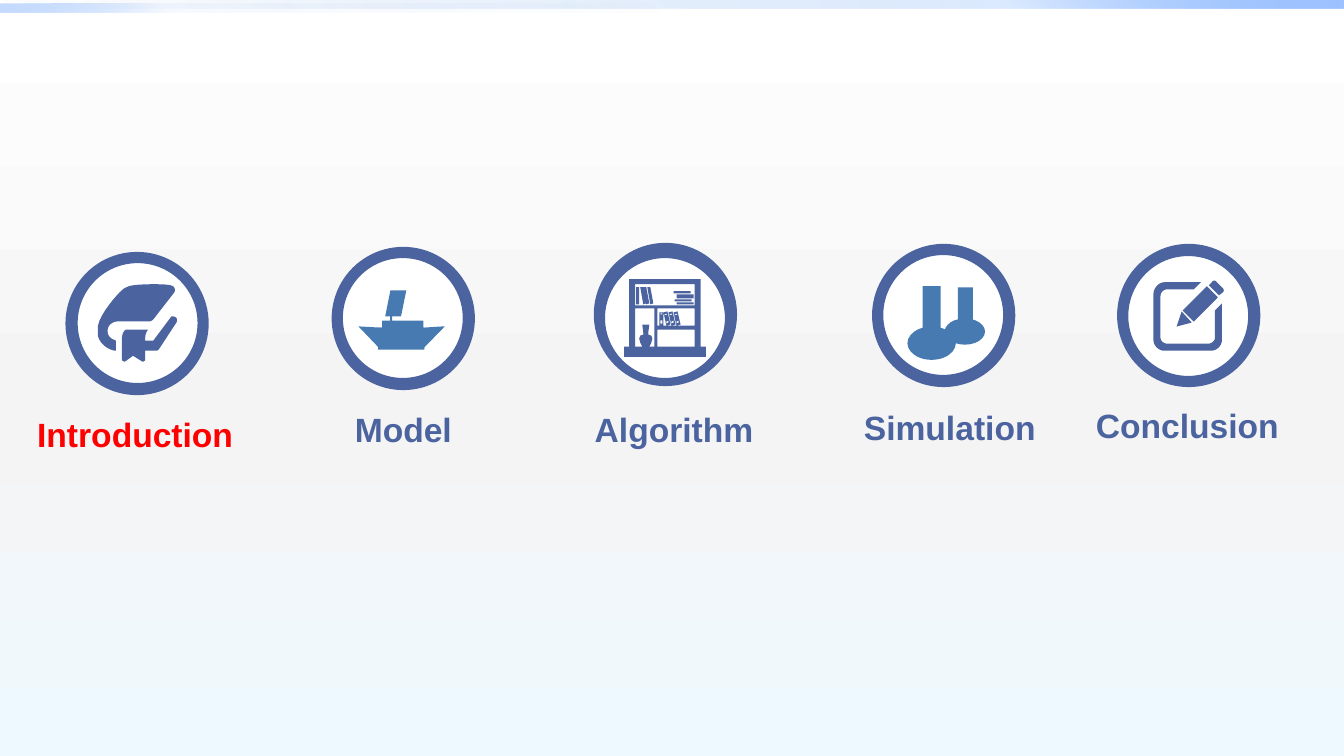
from lxml import etree
from pptx import Presentation
from pptx.dml.color import RGBColor
from pptx.enum import shapes, text
from pptx.oxml import ns
from pptx.util import Inches, Pt

INDIGO = RGBColor(0x4B, 0x64, 0x9F)
STEEL = RGBColor(0x47, 0x7A, 0xB1)
WHITE = RGBColor(0xFF, 0xFF, 0xFF)
RED = RGBColor(0xFF, 0x00, 0x00)
MIST = RGBColor(0xF4, 0xF4, 0xF4)
ICE = RGBColor(0xEE, 0xF9, 0xFF)
ROYAL = RGBColor(0x00, 0x58, 0xB7)
AZURE = RGBColor(0x4F, 0x95, 0xFF)
SKY = RGBColor(0x9E, 0xC2, 0xFF)

FORM = shapes.MSO_SHAPE
CURVE_STEPS = 8

# Outlines: a pair is a corner, six numbers are a Bezier curve to the last pair
GRADUATION_CAP = [
    [(1.70, 3.14), (1.70, 3.14, 1.70, 3.14, 1.72, 3.14),
     (1.74, 3.14, 1.77, 3.16, 1.75, 3.20), (1.58, 3.46),
     (1.57, 3.48, 1.55, 3.48, 1.54, 3.48), (1.44, 3.48), (1.44, 3.56),
     (1.44, 3.57, 1.44, 3.58, 1.43, 3.58), (1.42, 3.59), (1.40, 3.58),
     (1.32, 3.53), (1.25, 3.58), (1.24, 3.59, 1.23, 3.59, 1.22, 3.58),
     (1.21, 3.58, 1.21, 3.57, 1.21, 3.56), (1.21, 3.36),
     (1.21, 3.31, 1.23, 3.28, 1.25, 3.27), (1.47, 3.27),
     (1.44, 3.30, 1.44, 3.35, 1.44, 3.38), (1.52, 3.38)],
    [(1.51, 2.82), (1.57, 2.82, 1.64, 2.82, 1.69, 2.83),
     (1.74, 2.84, 1.74, 2.88, 1.73, 2.90), (1.52, 3.17),
     (1.51, 3.18, 1.49, 3.19, 1.48, 3.19), (1.16, 3.19),
     (1.13, 3.19, 1.05, 3.22, 1.07, 3.31),
     (1.08, 3.34, 1.10, 3.36, 1.13, 3.37), (1.15, 3.38), (1.15, 3.48),
     (1.11, 3.48, 1.00, 3.44, 0.97, 3.33),
     (0.97, 3.30, 0.97, 3.27, 0.97, 3.24),
     (0.99, 3.11, 1.18, 2.90, 1.21, 2.88),
     (1.23, 2.86, 1.25, 2.85, 1.28, 2.84),
     (1.30, 2.83, 1.40, 2.82, 1.51, 2.82)],
]
PENCIL_AND_PAD = [
    [(12.13, 2.90), (12.09, 2.93), (11.99, 2.83), (12.02, 2.80),
     (12.03, 2.78, 12.05, 2.78, 12.06, 2.79), (12.13, 2.86),
     (12.14, 2.87, 12.14, 2.89, 12.13, 2.90)],
    [(11.84, 3.19), (11.73, 3.08), (11.97, 2.84), (12.08, 2.95)],
    [(11.82, 3.20), (11.67, 3.24), (11.72, 3.09)],
    [(11.58, 2.87), (11.54, 2.87, 11.51, 2.90, 11.51, 2.94), (11.51, 3.35),
     (11.51, 3.38, 11.54, 3.41, 11.58, 3.41), (11.98, 3.41),
     (12.02, 3.41, 12.05, 3.38, 12.05, 3.35), (12.05, 3.08), (12.12, 3.01),
     (12.12, 3.37), (12.12, 3.43, 12.07, 3.48, 12.01, 3.48), (11.55, 3.48),
     (11.49, 3.48, 11.44, 3.43, 11.44, 3.37), (11.44, 2.92),
     (11.44, 2.86, 11.49, 2.80, 11.55, 2.80), (11.91, 2.80), (11.84, 2.87)],
]


def bookcase():
    """Outlines of the case, its four openings and what stands in them."""
    case = [(6.24, 2.77), (6.95, 2.77), (6.95, 3.44), (7.00, 3.44),
            (7.00, 3.54), (6.19, 3.54), (6.19, 3.44), (6.24, 3.44)]
    openings = [(6.30, 2.82, 6.89, 3.03), (6.30, 3.06, 6.49, 3.44),
                (6.52, 3.06, 6.89, 3.23), (6.52, 3.27, 6.89, 3.44)]
    lying_books = [(6.68, 2.89, 6.85, 2.91), (6.71, 2.92, 6.88, 2.96),
                   (6.69, 2.97, 6.86, 2.99), (6.71, 3.00, 6.88, 3.02)]
    upright = [(6.31, 2.85, 6.34, 3.02), (6.54, 3.10, 6.58, 3.23),
               (6.55, 3.11, 6.57, 3.12), (6.55, 3.18, 6.57, 3.21)]
    outlines = [case]
    for x1, y1, x2, y2 in openings + lying_books + upright:
        outlines.append([(x1, y1), (x2, y1), (x2, y2), (x1, y2)])
    for x in (6.35, 6.38, 6.42):
        outlines.append([(x, 2.85), (x + .03, 2.85), (x + .06, 3.01), (x + .03, 3.02)])
    for x in (6.58, 6.63, 6.68):
        outlines += [
            [(x, 3.10), (x + .04, 3.09), (x + .07, 3.22), (x + .03, 3.23)],
            [(x + .01, 3.12), (x + .03, 3.11), (x + .04, 3.12), (x + .01, 3.13)],
            [(x + .03, 3.19), (x + .05, 3.18), (x + .05, 3.20), (x + .03, 3.21)]]
    vase_side = [(6.37, 3.22), (6.38, 3.30), (6.38, 3.32), (6.35, 3.33),
                 (6.34, 3.36), (6.35, 3.40), (6.37, 3.44)]
    outlines.append(vase_side + [(12.81 - x, y) for x, y in reversed(vase_side)])
    return outlines


def flatten(outline):
    """Turn corners and curves into points in EMU."""
    points = []
    for step in outline:
        if len(step) == 2:
            points.append(step)
            continue
        ends = [points[-1], step[:2], step[2:4], step[4:]]
        for i in range(1, CURVE_STEPS + 1):
            t = i / CURVE_STEPS
            weights = ((1 - t) ** 3, 3 * t * (1 - t) ** 2, 3 * t * t * (1 - t), t ** 3)
            points.append(tuple(sum(w * end[axis] for w, end in zip(weights, ends))
                                for axis in (0, 1)))
    return [(Inches(x), Inches(y)) for x, y in points]


class SlideBuilder:
    """Holds the style and the page, and draws each kind of element."""
    font, label_size, disc, hole = "Arial", Pt(24), 1.4, 1.21

    def __init__(self, page):
        self.page = page
        self.target = page.shapes

    def gradient(self, fill, holder, stops, angle):
        """Fill with (position, colour, opacity) stops, angle clockwise."""
        fill.gradient()
        fill.gradient_angle = 360 - angle
        stop_list = holder.xpath(".//a:gsLst")[0]
        for old in list(stop_list):
            stop_list.remove(old)
        for position, color, opacity in stops:
            stop = etree.SubElement(stop_list, ns.qn("a:gs"), pos=str(position * 1000))
            tint = etree.SubElement(stop, ns.qn("a:srgbClr"), val=str(color))
            if opacity < 100:
                etree.SubElement(tint, ns.qn("a:alpha"), val=str(opacity * 1000))

    def shape(self, form, left, top, width, height, color=None, line=None, turn=0):
        item = self.target.add_shape(form, *map(Inches, (left, top, width, height)))
        item.rotation = turn
        return self.paint(item, color, line)

    def paint(self, item, color, line=None):
        item.shadow.inherit = False
        if color is not None:
            item.fill.solid()
            item.fill.fore_color.rgb = color
        if line is None:
            item.line.fill.background()
        else:
            item.line.color.rgb = line
            item.line.width = Pt(1.5)
        return item

    def bar(self, top, width, stops, angle):
        item = self.shape(FORM.RECTANGLE, 0, top, width, 0.08)
        self.gradient(item.fill, item._element, stops, angle)

    def icon(self, outlines, color):
        first, *rest = [flatten(outline) for outline in outlines]
        builder = self.target.build_freeform(*first[0], scale=1.0)
        builder.add_line_segments(first[1:], close=True)
        for points in rest:
            builder.move_to(*points[0])
            builder.add_line_segments(points[1:], close=True)
        self.paint(builder.convert_to_shape(), color)

    def label(self, words, left, top, width, color, wrap):
        box = self.target.add_textbox(*map(Inches, (left, top, width, 0.5)))
        box.text_frame.word_wrap = wrap
        box.text_frame.auto_size = text.MSO_AUTO_SIZE.SHAPE_TO_FIT_TEXT
        span = box.text_frame.paragraphs[0].add_run()
        span.text = words
        span.font.name, span.font.size, span.font.bold = self.font, self.label_size, True
        span.font.color.rgb = color

    def badge(self, disc_at, hole_at, label, outlines=(), parts=()):
        """Group a ring, its icon and its label."""
        self.target = self.page.shapes.add_group_shape().shapes
        self.shape(FORM.OVAL, *disc_at, self.disc, self.disc, INDIGO, INDIGO)
        self.shape(FORM.OVAL, *hole_at, self.hole, self.hole, WHITE, INDIGO)
        if outlines:
            self.icon(outlines, INDIGO)
        for form, frame, turn in parts:
            self.shape(form, *frame, STEEL, turn=turn)
        self.label(*label)
        self.target = self.page.shapes


def main():
    deck = Presentation()
    deck.slide_width, deck.slide_height = Inches(13.33), Inches(7.5)
    page = deck.slides.add_slide(deck.slide_layouts[6])
    build = SlideBuilder(page)
    build.gradient(page.background.fill, page._element,
                   [(0, WHITE, 100), (55, MIST, 100), (100, ICE, 100)], 90)
    build.bar(0, 13.33, [(0, ROYAL, 0), (75, AZURE, 20), (100, SKY, 100)], 315)
    build.bar(0.04, 6.67, [(0, ROYAL, 0), (75, AZURE, 5), (100, SKY, 60)], 135)

    pillars = [(FORM.OVAL, (9.37, 3.16, 0.40, 0.26), 0),
               (FORM.RECTANGLE, (9.50, 2.85, 0.15, 0.39), 0),
               (FORM.OVAL, (9.00, 3.24, 0.48, 0.33), 0),
               (FORM.RECTANGLE, (9.15, 2.84, 0.18, 0.50), 0)]
    ship = [(FORM.RECTANGLE, (3.75, 3.25, 0.46, 0.22), 0),
            (FORM.RIGHT_TRIANGLE, (3.62, 3.10, 0.28, 0.30), 316.3),
            (FORM.RIGHT_TRIANGLE, (4.05, 3.11, 0.31, 0.28), 314.2),
            (FORM.RECTANGLE, (3.79, 3.18, 0.41, 0.15), 0),
            (FORM.RECTANGLE, (3.87, 2.90, 0.02, 0.55), 0),
            (FORM.PARALLELOGRAM, (3.82, 2.88, 0.21, 0.26), 0)]
    build.badge((0.66, 2.51), (0.76, 2.60),
                ("Introduction", 0.27, 4.06, 2.16, RED, False), GRADUATION_CAP)
    build.badge((5.90, 2.42), (5.99, 2.55),
                ("Algorithm", 5.80, 4.01, 1.79, INDIGO, False), bookcase())
    build.badge((11.09, 2.43), (11.18, 2.53),
                ("Conclusion", 10.77, 3.97, 2.03, INDIGO, False), PENCIL_AND_PAD)
    build.badge((8.66, 2.43), (8.75, 2.52),
                ("Simulation", 8.47, 3.99, 2.04, INDIGO, True), parts=pillars)
    build.badge((3.30, 2.46), (3.39, 2.55),
                ("Model", 3.42, 4.01, 1.18, INDIGO, True), parts=ship)
    deck.save("out.pptx")


if __name__ == "__main__":
    main()
